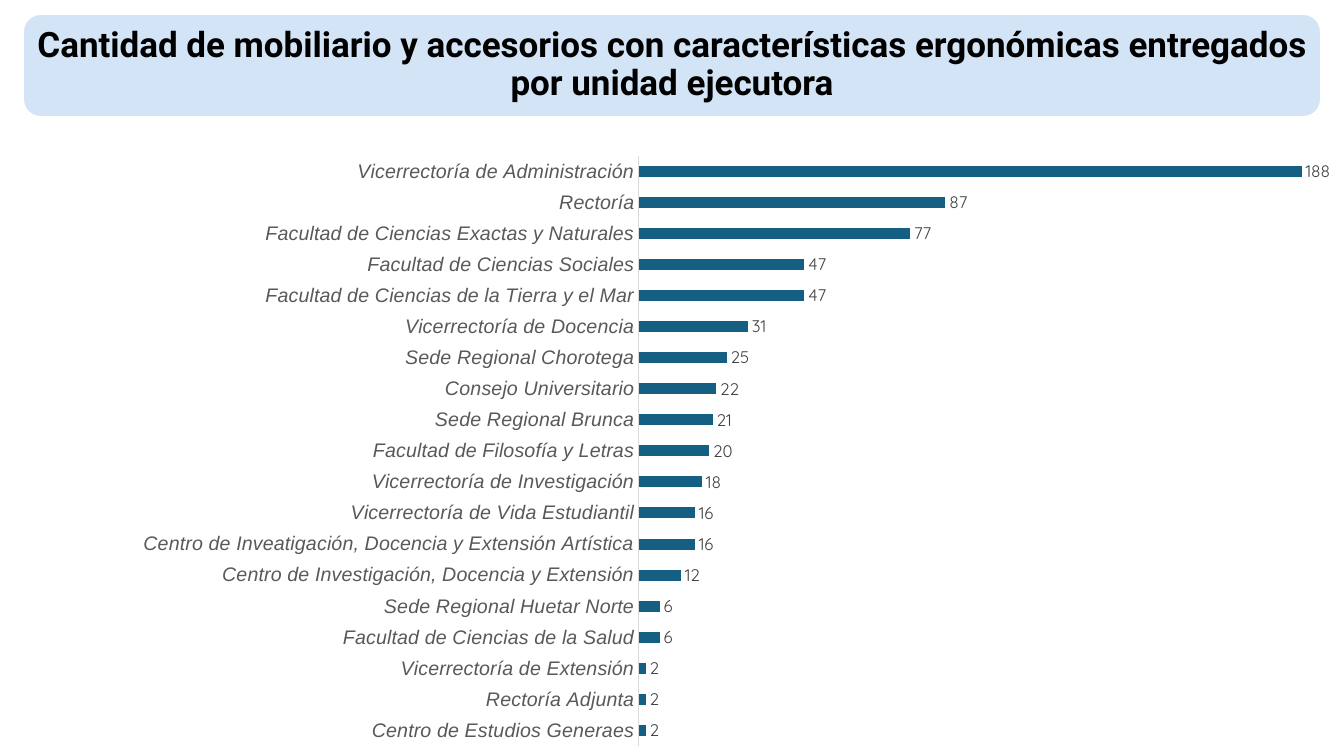
from lxml import etree
from pptx import Presentation
from pptx.chart.data import CategoryChartData
from pptx.dml.color import RGBColor
from pptx.enum.chart import XL_CHART_TYPE, XL_LABEL_POSITION, XL_TICK_MARK
from pptx.enum.shapes import MSO_SHAPE
from pptx.enum.text import MSO_ANCHOR, PP_ALIGN
from pptx.oxml import parse_xml
from pptx.oxml.ns import nsdecls, qn
from pptx.util import Pt

BAR_CLUSTERED = XL_CHART_TYPE.BAR_CLUSTERED
OUTSIDE_END = XL_LABEL_POSITION.OUTSIDE_END
NO_TICK = XL_TICK_MARK.NONE
ROUNDED = MSO_SHAPE.ROUNDED_RECTANGLE
BOTTOM = MSO_ANCHOR.BOTTOM
CENTER = PP_ALIGN.CENTER

BLACK = RGBColor(0x00, 0x00, 0x00)
PALE_BLUE = RGBColor(0xA6, 0xCA, 0xEC)
TEAL = RGBColor(0x15, 0x60, 0x82)
LABEL_GRAY = RGBColor(0x40, 0x40, 0x40)
AXIS_GRAY = RGBColor(0x59, 0x59, 0x59)
LINE_GRAY = RGBColor(0xD9, 0xD9, 0xD9)

EMU_PER_PX = 914400 / 100.8

DELIVERIES = [
    ("Centro de Estudios Generaes", 2),
    ("Rectoría Adjunta", 2),
    ("Vicerrectoría de Extensión", 2),
    ("Facultad de Ciencias de la Salud", 6),
    ("Sede Regional Huetar Norte", 6),
    ("Centro de Investigación, Docencia y Extensión", 12),
    ("Centro de Inveatigación, Docencia y Extensión Artística", 16),
    ("Vicerrectoría de Vida Estudiantil", 16),
    ("Vicerrectoría de Investigación", 18),
    ("Facultad de Filosofía y Letras", 20),
    ("Sede Regional Brunca", 21),
    ("Consejo Universitario", 22),
    ("Sede Regional Chorotega", 25),
    ("Vicerrectoría de Docencia", 31),
    ("Facultad de Ciencias de la Tierra y el Mar", 47),
    ("Facultad de Ciencias Sociales", 47),
    ("Facultad de Ciencias Exactas y Naturales", 77),
    ("Rectoría", 87),
    ("Vicerrectoría de Administración", 188),
]


def px(length):
    return round(length * EMU_PER_PX)


class SlideBuilder:
    title_font = "Roboto"
    axis_font = "Arial"
    label_font = "Quicksand"

    def __init__(self, width, height):
        self.deck = Presentation()
        self.deck.slide_width = px(width)
        self.deck.slide_height = px(height)
        self.slide = self.deck.slides.add_slide(self.deck.slide_layouts[5])

    def style(self, font, name, size, color):
        font.name = name
        font.size = Pt(size)
        font.color.rgb = color

    def panel(self, box, color, opacity):
        panel = self.slide.shapes.add_shape(ROUNDED, *map(px, box))
        panel.shadow.inherit = False
        panel.fill.solid()
        panel.fill.fore_color.rgb = color
        panel.line.fill.background()
        tint = panel._element.spPr.find(".//" + qn("a:srgbClr"))
        etree.SubElement(tint, qn("a:alpha")).set("val", str(opacity * 1000))

    def title(self, box, text, inset):
        heading = self.slide.shapes.title
        heading.left, heading.top, heading.width, heading.height = map(px, box)
        frame = heading.text_frame
        frame.text = text
        frame.word_wrap = True
        frame.vertical_anchor = BOTTOM
        frame.margin_left = frame.margin_right = px(inset)
        frame.margin_top = frame.margin_bottom = px(inset)
        paragraph = frame.paragraphs[0]
        paragraph.alignment = CENTER
        paragraph.line_spacing = 0.9
        font = paragraph.runs[0].font
        self.style(font, self.title_font, 25, BLACK)
        font.bold = True
        self.slide.shapes._spTree.append(heading._element)

    def bar_chart(self, box, rows, plot_area, maximum):
        data = CategoryChartData()
        data.categories = [unit for unit, _ in rows]
        data.add_series("Series 1", [count for _, count in rows])
        chart = self.slide.shapes.add_chart(
            BAR_CLUSTERED, *map(px, box), data).chart
        chart.has_legend = False
        chart.has_title = False
        self.style(chart.font, self.label_font, 10, BLACK)

        units = chart.category_axis
        units.major_tick_mark = units.minor_tick_mark = NO_TICK
        units.format.line.color.rgb = LINE_GRAY
        units.format.line.width = Pt(0.75)
        self.style(units.tick_labels.font, self.axis_font, 14, AXIS_GRAY)
        units.tick_labels.font.italic = True

        counts = chart.value_axis
        counts.minimum_scale = 0
        counts.maximum_scale = maximum
        counts.has_major_gridlines = False
        counts.visible = False

        plot = chart.plots[0]
        plot.gap_width = 182
        plot.vary_by_categories = False
        bars = plot.series[0]
        bars.format.fill.solid()
        bars.format.fill.fore_color.rgb = TEAL
        labels = bars.data_labels
        labels.show_value = True
        labels.position = OUTSIDE_END
        self.style(labels.font, self.label_font, 12, LABEL_GRAY)
        self.place_plot(chart, plot_area)

    def place_plot(self, chart, plot_area):
        parts = "".join(
            f'<c:{key} val="{value}"/>' for key, value in
            [("layoutTarget", "inner"), ("xMode", "edge"), ("yMode", "edge"),
             *zip("xywh", plot_area)])
        layout = parse_xml(
            f'<c:layout {nsdecls("c")}><c:manualLayout>{parts}'
            '</c:manualLayout></c:layout>')
        area = chart._chartSpace.find(".//" + qn("c:plotArea"))
        for automatic in area.findall(qn("c:layout")):
            area.remove(automatic)
        area.insert(0, layout)

    def save(self):
        self.deck.save("out.pptx")


def main():
    builder = SlideBuilder(1344, 756)
    header = (24, 15, 1296, 101)
    builder.bar_chart((13, 100, 1331, 656), DELIVERIES,
                      (0.47, 0.085, 0.53, 0.9), 200)
    builder.panel(header, PALE_BLUE, 50)
    builder.title(header, "Cantidad de mobiliario y accesorios con "
                  "características ergonómicas entregados por unidad "
                  "ejecutora", 13)
    builder.save()


if __name__ == "__main__":
    main()
